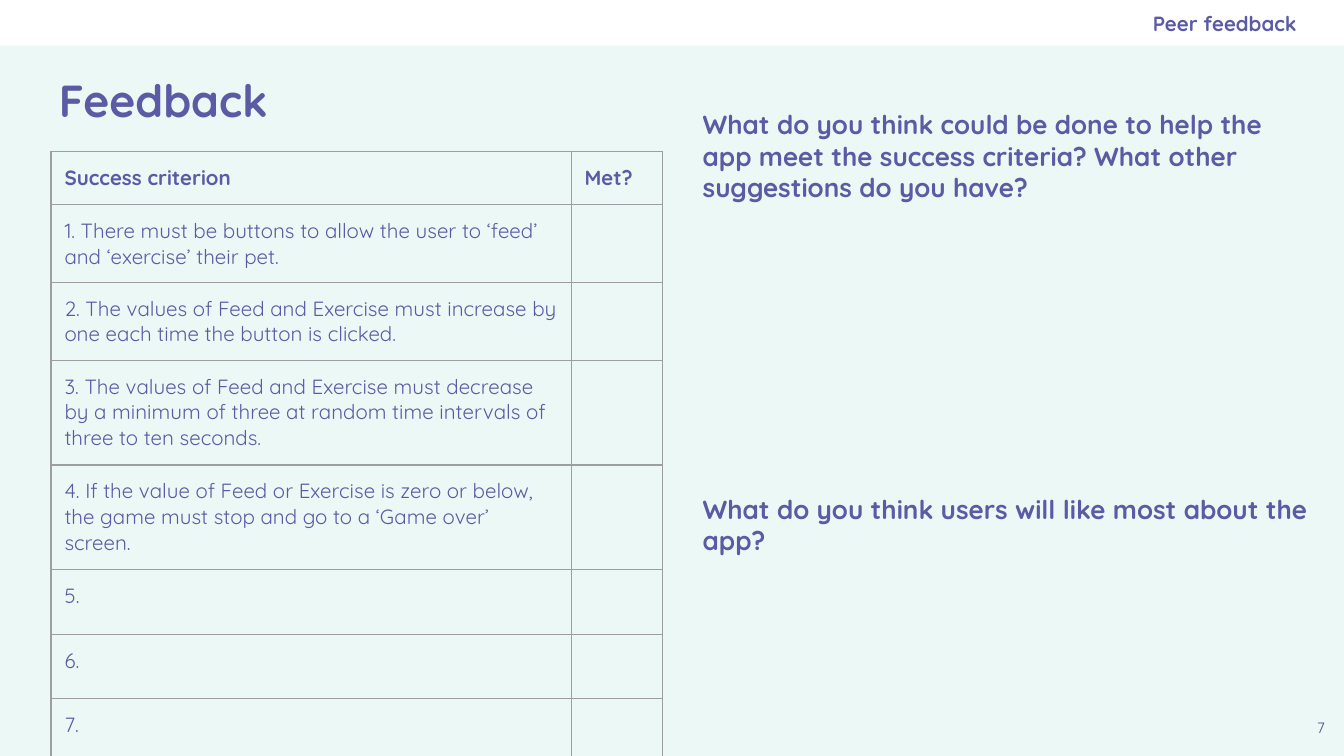
import pptx
import pptx.dml.color
import pptx.enum.shapes
import pptx.enum.text
import pptx.oxml.ns
import lxml.etree

Inches, Pt = pptx.util.Inches, pptx.util.Pt
ALIGN, ANCHOR = pptx.enum.text.PP_ALIGN, pptx.enum.text.MSO_ANCHOR
INK, FONT, PAD = "5B5BA5", "Quicksand", 0.1
RULE = "9E9E9E"
ROWS = [
    ("Success criterion", 0.39),
    ("1. There must be buttons to allow the user to ‘feed’ and ‘exercise’ their pet.", 0.58),
    ("2. The values of Feed and Exercise must increase by one each time the button is clicked.", 0.58),
    ("3. The values of Feed and Exercise must decrease by a minimum of three at random "
     "time intervals of three to ten seconds.", 0.78),
    ("4. If the value of Feed or Exercise is zero or below, the game must stop and go to "
     "a ‘Game over’ screen.", 0.78),
    ("5.", 0.48),
    ("6.", 0.48),
    ("7.", 0.48),
]


def paint(fill, tone):
    fill.solid()
    fill.fore_color.rgb = pptx.dml.color.RGBColor.from_string(tone)


def add_run(para, text, size, bold=False, tone=INK):
    run = para.add_run()
    run.text = text
    run.font.name, run.font.size, run.font.bold = FONT, Pt(size), bold
    paint(run.font.fill, tone)


def add_text(slide, box, text, size, bold=True, tone=INK,
             align=ALIGN.LEFT, anchor=ANCHOR.TOP, right=PAD):
    frame = slide.shapes.add_textbox(*map(Inches, box)).text_frame
    frame.word_wrap = True
    frame.vertical_anchor = anchor
    frame.margin_left = frame.margin_top = frame.margin_bottom = Inches(PAD)
    frame.margin_right = Inches(right)
    frame.paragraphs[0].alignment = align
    add_run(frame.paragraphs[0], text, size, bold, tone)


def add_edges(cell):
    props = cell._tc.get_or_add_tcPr()
    name = pptx.oxml.ns.qn
    for num, side in enumerate(("a:lnL", "a:lnR", "a:lnT", "a:lnB")):
        line = lxml.etree.Element(name(side), w=str(Pt(0.75)))
        fill = lxml.etree.SubElement(line, name("a:solidFill"))
        lxml.etree.SubElement(fill, name("a:srgbClr"), val=RULE)
        props.insert(num, line)


def fill_cell(cell, text, bold):
    cell.fill.background()
    cell.margin_left = cell.margin_right = Inches(PAD)
    cell.margin_top = cell.margin_bottom = Inches(PAD)
    para = cell.text_frame.paragraphs[0]
    if text:
        add_run(para, text, 11, bold)
    else:
        # Keep an empty cell from stretching its row
        lxml.etree.SubElement(para._p, pptx.oxml.ns.qn("a:endParaRPr"), sz="1100")
    add_edges(cell)


# White band with the section name at its right
def add_band(slide, box):
    left, top, width, height = box
    band = slide.shapes.add_shape(
        pptx.enum.shapes.MSO_SHAPE.RECTANGLE, *map(Inches, box))
    band.shadow.inherit = False
    band.line.fill.background()
    paint(band.fill, "FFFFFF")
    add_text(slide, (left + width - 4.25, top, 3.9, height), "Peer feedback", 11,
             align=ALIGN.RIGHT, anchor=ANCHOR.MIDDLE, right=0)


# Table of success criteria
def add_grid(slide, box):
    table = slide.shapes.add_table(len(ROWS), 2, *map(Inches, box)).table
    table.first_row = table.horz_banding = False
    last = 0.68
    table.columns[0].width = Inches(box[2] - last)
    table.columns[1].width = Inches(last)
    for num, (text, height) in enumerate(ROWS):
        table.rows[num].height = Inches(height)
        fill_cell(table.cell(num, 0), text, num == 0)
        fill_cell(table.cell(num, 1), "" if num else "Met?", num == 0)


# Two open questions, one above the other
def add_asks(slide, box):
    left, top, width, height = box
    asks = [
        (0, 0.54, "What do you think could be done to help the app meet the success "
                  "criteria? What other suggestions do you have?"),
        (height - 0.38, 0.38, "What do you think users will like most about the app?"),
    ]
    for drop, tall, text in asks:
        add_text(slide, (left, top + drop, width, tall), text, 14)


def main():
    deck = pptx.Presentation()
    # Widescreen, 16 to 9
    deck.slide_width = Inches(10)
    deck.slide_height = deck.slide_width * 9 // 16
    slide = deck.slides.add_slide(deck.slide_layouts[6])
    paint(slide.background.fill, "ECF8F5")
    add_band(slide, (0, 0, 10, 0.34))
    add_text(slide, (0.34, 0.35, 9.32, 0.78), "Feedback", 24, anchor=ANCHOR.MIDDLE)
    add_grid(slide, (0.38, 1.13, 4.55, sum(height for _, height in ROWS)))
    add_asks(slide, (5.13, 0.71, 4.78, 3.24))
    # Page number
    add_text(slide, (9.66, 5.28, 0.34, 0.34), "7", 8, False, "494985", ALIGN.CENTER)
    deck.save("out.pptx")


if __name__ == "__main__":
    main()
